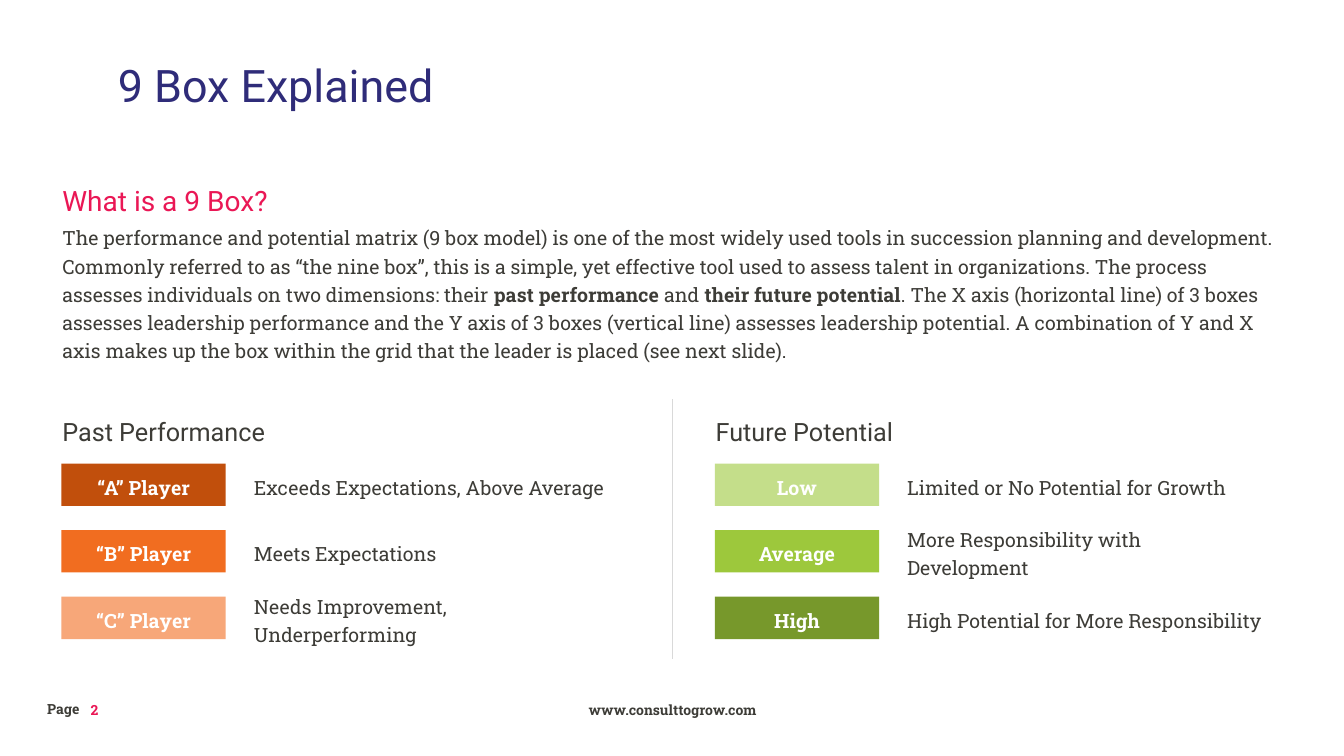
from dataclasses import dataclass

from lxml import etree
from pptx import Presentation
from pptx.dml.color import RGBColor
from pptx.enum.shapes import MSO_CONNECTOR as Connector, MSO_SHAPE as Shape
from pptx.enum.text import MSO_ANCHOR as Anchor, PP_ALIGN as Align
from pptx.oxml.ns import qn
from pptx.util import Inches, Pt

COLORS = {
    "navy": "2F2C79", "pink": "EA1755", "ink": "3D3C37", "white": "FFFFFF",
    "rule": "D9D9D9",
    "rust": "C14F0C", "orange": "F16D20", "peach": "F7A779",
    "pale green": "C4DE8A", "green": "9DC83C", "olive": "77982B",
}
HEADING_FONT, BODY_FONT = "Roboto", "Roboto Slab"


@dataclass(frozen=True)
class Span:
    text: str
    bold: bool = False


@dataclass(frozen=True)
class Style:
    size: float
    color: str = "ink"
    font: str = BODY_FONT
    bold: bool | None = None
    align: Align = Align.LEFT
    spacing: float = 1.0
    anchor: Anchor = Anchor.TOP


@dataclass(frozen=True)
class Label:
    left: float
    top: float
    width: float
    height: float
    text: str
    style: Style


@dataclass(frozen=True)
class Rating:
    name: str
    meaning: str
    color: str


@dataclass(frozen=True)
class Scale:
    left: float
    title: str
    ratings: tuple[Rating, ...]


TITLE = Style(32, "navy", HEADING_FONT, spacing=0.9, anchor=Anchor.MIDDLE)
QUESTION = Style(20, "pink", HEADING_FONT)
SCALE_TITLE = Style(18, font=HEADING_FONT)
BODY = Style(14, spacing=1.2)
MEANING = Style(14, spacing=1.2, anchor=Anchor.MIDDLE)
RATING = Style(14, "white", bold=True, align=Align.CENTER, spacing=1.2, anchor=Anchor.MIDDLE)
PAGE_WORD = Style(10, bold=True)
PAGE_NUMBER = Style(10, "pink", bold=True, anchor=Anchor.MIDDLE)
WEBSITE = Style(10, bold=True, align=Align.CENTER, anchor=Anchor.MIDDLE)

LABELS = (
    Label(0.8, 6.9, 0.67, 0.29, "2", PAGE_NUMBER),
    Label(0.37, 6.9, 0.6, 0.27, "Page", PAGE_WORD),
    Label(4.42, 6.84, 4.5, 0.4, "www.consulttogrow.com", WEBSITE),
    Label(1.07, 0.46, 11.85, 0.82, "9 Box Explained", TITLE),
    Label(0.52, 1.77, 2.26, 0.44, "What is a 9 Box?", QUESTION),
)

EXPLANATION = (
    Span("The performance and potential matrix (9 box model) is one of the most widely used "
         "tools in succession planning and development. Commonly referred to as “the nine "
         "box”, this is a simple, yet effective tool used to assess talent in organizations. "
         "The process assesses individuals on two dimensions: their "),
    Span("past performance ", True),
    Span("and "),
    Span("their future potential", True),
    Span(". The X axis (horizontal line) of 3 boxes assesses leadership performance and the "
         "Y axis of 3 boxes (vertical line) assesses leadership potential. A combination of "
         "Y and X axis makes up the box within the grid that the leader is placed (see next "
         "slide)."),
)

SCALES = (
    Scale(0.52, "Past Performance", (
        Rating("“A” Player", "Exceeds Expectations, Above Average", "rust"),
        Rating("“B” Player", "Meets Expectations", "orange"),
        Rating("“C” Player", "Needs Improvement, Underperforming", "peach"),
    )),
    Scale(7.0, "Future Potential", (
        Rating("Low", "Limited or No Potential for Growth", "pale green"),
        Rating("Average", "More Responsibility with Development", "green"),
        Rating("High", "High Potential for More Responsibility", "olive"),
    )),
)
SCALE_TOP, RATING_TOP, RATING_STEP, RATING_HEIGHT = 4.08, 4.6, 0.66, 0.42


def rgb(name: str) -> RGBColor:
    return RGBColor.from_string(COLORS[name])


def write(box, spans: tuple[Span, ...], style: Style) -> None:
    frame = box.text_frame
    frame.word_wrap = True
    frame.vertical_anchor = style.anchor
    para = frame.paragraphs[0]
    para.alignment = style.align
    para.line_spacing = style.spacing
    para.font.name = style.font
    para.font.size = Pt(style.size)
    para.font.color.rgb = rgb(style.color)
    para.font.bold = style.bold
    for span in spans:
        run = para.add_run()
        run.text = span.text
        if span.bold:
            run.font.bold = True


def add_text(page, left: float, top: float, width: float, height: float,
             spans: tuple[Span, ...], style: Style) -> None:
    box = page.shapes.add_textbox(Inches(left), Inches(top), Inches(width), Inches(height))
    write(box, spans, style)


def add_rating(page, left: float, top: float, rating: Rating) -> None:
    box = page.shapes.add_shape(Shape.RECTANGLE, Inches(left + 0.09), Inches(top),
                                Inches(1.63), Inches(RATING_HEIGHT))
    box.shadow.inherit = False
    box.fill.solid()
    box.fill.fore_color.rgb = rgb(rating.color)
    box.line.fill.background()
    write(box, (Span(rating.name),), RATING)
    add_text(page, left + 1.9, top, 3.74, RATING_HEIGHT, (Span(rating.meaning),), MEANING)


def add_scale(page, scale: Scale) -> None:
    add_text(page, scale.left, SCALE_TOP, 2.26, 0.4, (Span(scale.title),), SCALE_TITLE)
    for row, rating in enumerate(scale.ratings):
        add_rating(page, scale.left, RATING_TOP + row * RATING_STEP, rating)


def add_divider(page, x: float, top: float, bottom: float) -> None:
    line = page.shapes.add_connector(Connector.STRAIGHT, Inches(x), Inches(top),
                                     Inches(x), Inches(bottom))
    line.line.color.rgb = rgb("rule")
    line.line.width = Pt(0.5)
    etree.SubElement(line._element.spPr, qn("a:effectLst"))


def main() -> None:
    deck = Presentation()
    deck.slide_width, deck.slide_height = Inches(13.33), Inches(7.5)
    page = deck.slides.add_slide(deck.slide_layouts[6])

    # Footer, title and question
    for label in LABELS:
        add_text(page, label.left, label.top, label.width, label.height,
                 (Span(label.text),), label.style)

    # Explanation
    add_text(page, 0.52, 2.15, 12.41, 1.49, EXPLANATION, BODY)

    # Two rating scales with a rule between them
    for scale in SCALES:
        add_scale(page, scale)
    add_divider(page, 6.67, 3.96, 6.54)

    deck.save("out.pptx")


if __name__ == "__main__":
    main()
